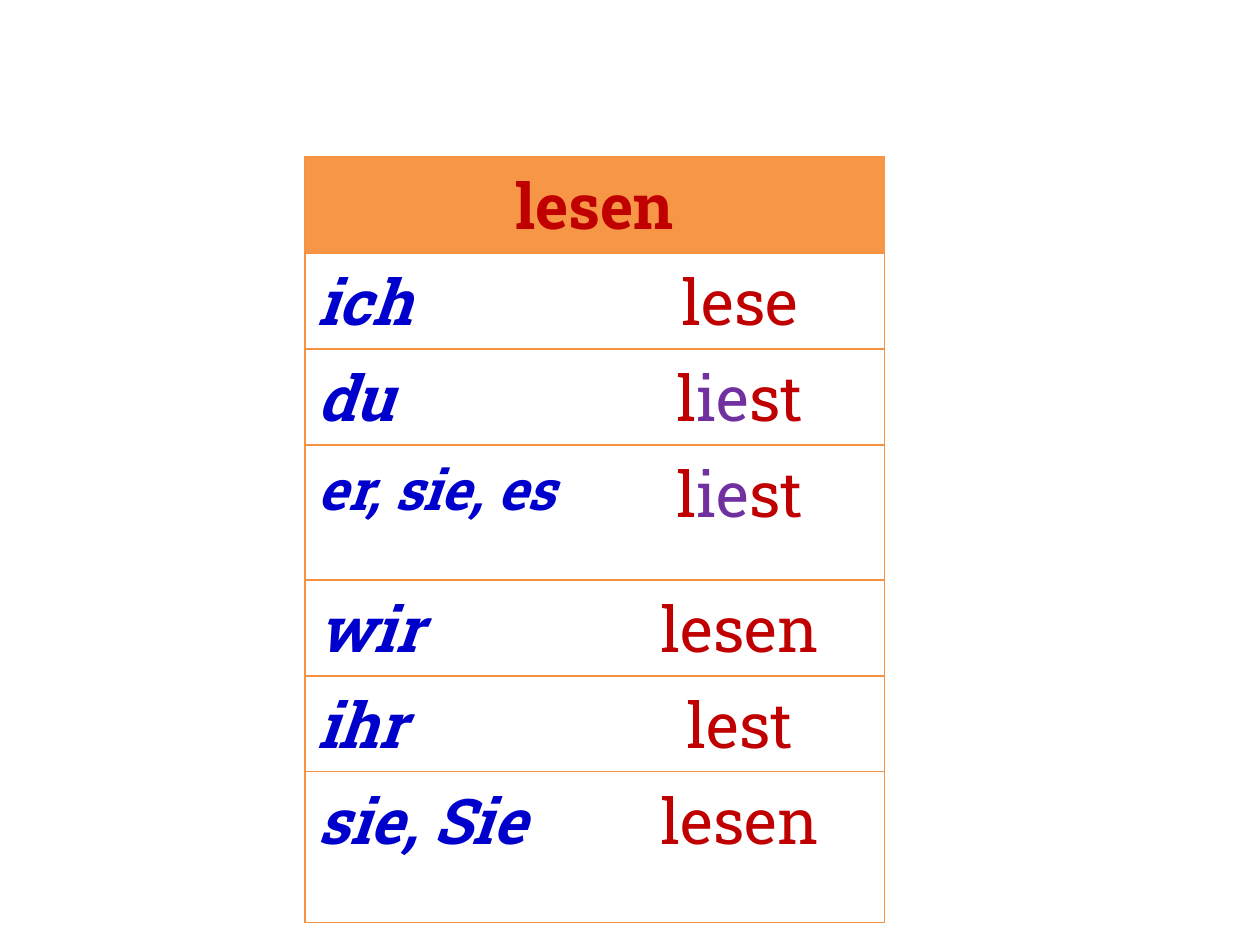
from lxml import etree
from pptx import Presentation
from pptx.dml.color import RGBColor
from pptx.enum.text import PP_ALIGN
from pptx.oxml.ns import qn
from pptx.util import Emu, Pt

CENTER, LEFT = PP_ALIGN.CENTER, PP_ALIGN.LEFT
PX = 914400 // 126
FONT = "Roboto Slab"
COLORS = {"header": "F79646", "border": "F69240", "body": "FFFFFF",
          "verb": "C00000", "vowel": "7030A0", "pronoun": "0000CC"}

INFINITIVE = "lesen"
# pronoun, pronoun size in points, verb form as (text, colour) parts, row height in px
STEM_CHANGE = [("l", "verb"), ("ie", "vowel"), ("st", "verb")]
FORMS = [
    ("ich", 36, [("lese", "verb")], 96),
    ("du", 36, STEM_CHANGE, 96),
    ("er, sie, es", 32, STEM_CHANGE, 135),
    ("wir", 36, [("lesen", "verb")], 96),
    ("ihr", 36, [("lest", "verb")], 96),
    ("sie, Sie", 36, [("lesen", "verb")], 151),
]
TABLE_LEFT, TABLE_TOP, COLUMN_WIDTH, HEADER_HEIGHT = 305, 157, 290, 96


def px(length):
    return Emu(length * PX)


def color(name):
    return RGBColor.from_string(COLORS[name])


def write(cell, parts, size=36, align=CENTER, bold=False, italic=False):
    para = cell.text_frame.paragraphs[0]
    para.alignment = align
    for text, name in parts:
        span = para.add_run()
        span.text = text
        span.font.name, span.font.size = FONT, Pt(size)
        span.font.bold, span.font.italic = bold, italic
        span.font.color.rgb = color(name)


def style_cell(cell, fill, hidden_side):
    """Border every side except the one facing the other column, then fill."""
    properties = cell._tc.get_or_add_tcPr()
    for side in ("lnL", "lnR", "lnT", "lnB"):
        line = etree.SubElement(properties, qn("a:" + side), w=str(Pt(0.75)))
        if side == hidden_side:
            etree.SubElement(line, qn("a:noFill"))
        else:
            solid = etree.SubElement(line, qn("a:solidFill"))
            etree.SubElement(solid, qn("a:srgbClr"), val=COLORS["border"])
    cell.fill.solid()
    cell.fill.fore_color.rgb = color(fill)


deck = Presentation()
deck.slide_width, deck.slide_height = px(1260), px(945)
page = deck.slides.add_slide(deck.slide_layouts[6])

heights = [HEADER_HEIGHT] + [form[-1] for form in FORMS]
table = page.shapes.add_table(
    len(heights), 2, px(TABLE_LEFT), px(TABLE_TOP),
    px(2 * COLUMN_WIDTH), px(sum(heights))).table
table.horz_banding = False
for column in table.columns:
    column.width = px(COLUMN_WIDTH)
for index, height in enumerate(heights):
    table.rows[index].height = px(height)
    fill = "body" if index else "header"
    style_cell(table.cell(index, 0), fill, "lnR")
    style_cell(table.cell(index, 1), fill, "lnL")

table.cell(0, 0).merge(table.cell(0, 1))
write(table.cell(0, 0), [(INFINITIVE, "verb")], bold=True)
for index, (pronoun, size, parts, _) in enumerate(FORMS, start=1):
    write(table.cell(index, 0), [(pronoun, "pronoun")], size, LEFT, bold=True, italic=True)
    write(table.cell(index, 1), parts)

deck.save("out.pptx")
